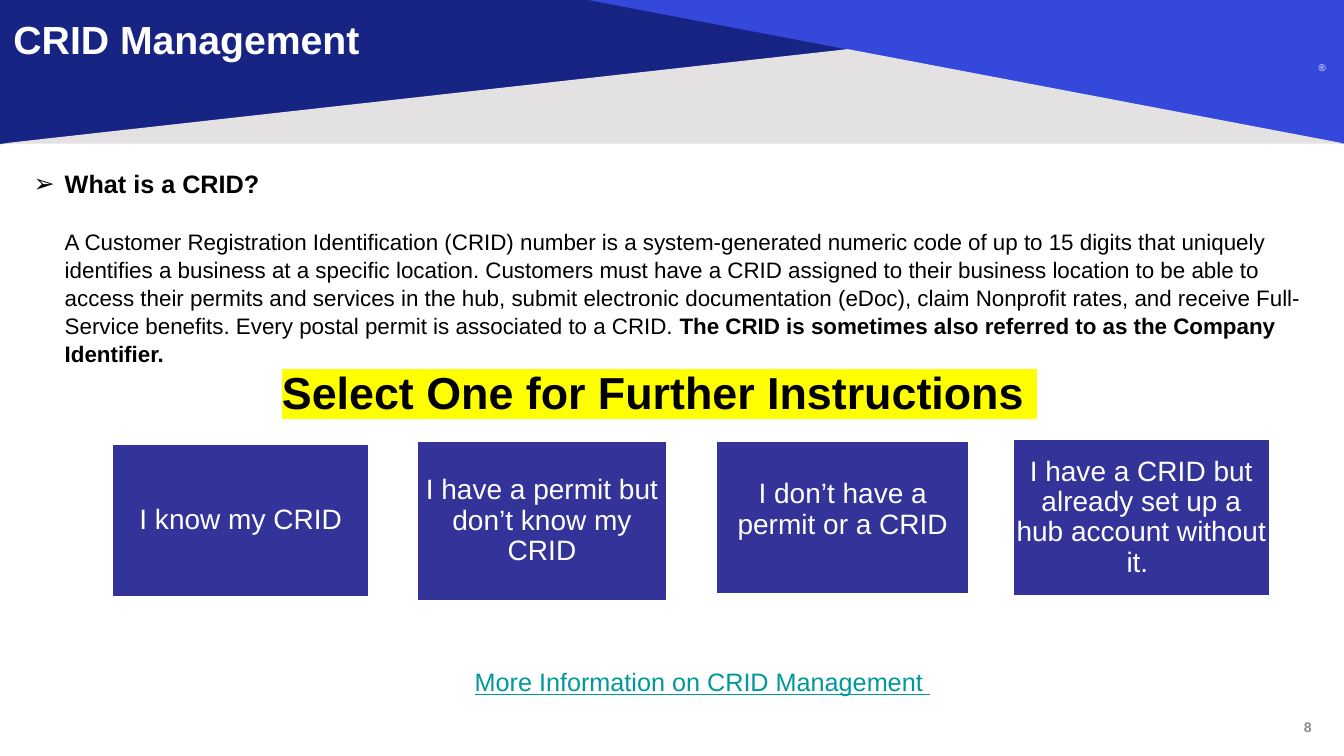
"""Build the CRID Management slide."""
from lxml.etree import SubElement
from pptx import Presentation
from pptx.dml.color import RGBColor
from pptx.enum.shapes import MSO_SHAPE
from pptx.enum.text import MSO_ANCHOR, MSO_AUTO_SIZE, PP_ALIGN
from pptx.oxml import parse_xml
from pptx.oxml.ns import nsdecls, qn
from pptx.util import Inches, Pt

COLORS = {
    "navy": "172483", "blue": "3448DC", "grey": "E3E1E1", "card": "333399",
    "white": "FFFFFF", "black": "000000", "number": "8C8C8C",
    "link": "009999", "marker": "FFFF00",
}

deck = Presentation()
deck.slide_width, deck.slide_height = Inches(13.33), Inches(7.5)
COLUMN, ROW = deck.slide_width / 12, deck.slide_height / 12
page = deck.slides.add_slide(deck.slide_layouts[1])


def grid(left, top, width, height):
    return [int(left * COLUMN), int(top * ROW), int(width * COLUMN), int(height * ROW)]


def write(para, text, size, color, bold=False):
    span = para.add_run()
    span.text = text
    span.font.name = "Arial"
    span.font.size = Pt(size)
    span.font.bold = bold
    span.font.color.rgb = RGBColor.from_string(COLORS[color])
    return span


title, body = page.placeholders

triangles = [
    ("navy", (0, 0, 11.93, 2.29), 0, ["flipV"]),
    ("blue", (5.25, 0, 6.76, 2.29), 0, ["flipH", "flipV"]),
    ("grey", (0.01, 0.78, 12, 1.5), 0.63, []),
]
for color, place, apex, flips in triangles:
    triangle = page.shapes.add_shape(MSO_SHAPE.ISOSCELES_TRIANGLE, *grid(*place))
    triangle.adjustments[0] = apex
    triangle.shadow.inherit = False
    triangle.fill.solid()
    triangle.fill.fore_color.rgb = RGBColor.from_string(COLORS[color])
    triangle.line.fill.background()
    for flip in flips:
        triangle.element.spPr.find(qn("a:xfrm")).set(flip, "1")
    title.element.addprevious(triangle.element)

title.left, title.top, title.width, title.height = grid(0.03, 0.05, 3.65, 1.14)
title.text_frame.auto_size = MSO_AUTO_SIZE.NONE
title.text_frame.vertical_anchor = MSO_ANCHOR.MIDDLE
title.text_frame.paragraphs[0].alignment = PP_ALIGN.LEFT
write(title.text_frame.paragraphs[0], "CRID Management", 28, "white", True)

body.left, body.top, body.width, body.height = grid(0.2, 2.59, 11.65, 3.23)
body.text_frame.auto_size = MSO_AUTO_SIZE.NONE
question = body.text_frame.paragraphs[0]
answer = body.text_frame.add_paragraph()
for para, indent, bullet in [(question, -0.31, "➢"), (answer, 0, None)]:
    properties = para._p.get_or_add_pPr()
    properties.set("marL", str(Inches(0.32)))
    properties.set("indent", str(Inches(indent)))
    if bullet:
        SubElement(properties, qn("a:buFont"), typeface="Arial")
        SubElement(properties, qn("a:buChar"), char=bullet)
    else:
        SubElement(properties, qn("a:buNone"))
    para.space_before = Pt(0)
question.space_after = Pt(20)
answer.line_spacing = 1.05
write(question, "What is a CRID?", 18, "black", True)
write(answer, "A Customer Registration Identification (CRID) number is a system-generated "
      "numeric code of up to 15 digits that uniquely identifies a business at a specific "
      "location. Customers must have a CRID assigned to their business location to be able "
      "to access their permits and services in the hub, submit electronic documentation "
      "(eDoc), claim Nonprofit rates, and receive Full-Service benefits. Every postal "
      "permit is associated to a CRID. ", 16, "black")
write(answer, "The CRID is sometimes also referred to as the Company Identifier.",
      16, "black", True)

labels = [
    ("®", (11.71, 0.9, 0.19, 0.35), 7, "white", False, PP_ALIGN.CENTER),
    ("8", (8.6, 11.33, 3.2, 0.4), 10, "number", True, PP_ALIGN.RIGHT),
    ("More Information on CRID Management ", (4.15, 10.5, 5.26, 0.64), 18, "link",
     False, PP_ALIGN.LEFT),
    ("Select One for Further Instructions ", (2.13, 5.71, 7.52, 1.02), 32, "black",
     True, PP_ALIGN.CENTER),
]
for text, place, size, color, bold, alignment in labels:
    box = page.shapes.add_textbox(*grid(*place))
    frame = box.text_frame
    frame.word_wrap = True
    if text == "®":
        frame.margin_left = frame.margin_right = 0
    frame.paragraphs[0].alignment = alignment
    span = write(frame.paragraphs[0], text, size, color, bold)
    if color == "link":
        span.font.underline = True
    if text.startswith("Select"):
        highlight = parse_xml(f'<a:highlight {nsdecls("a")}>'
                              f'<a:srgbClr val="{COLORS["marker"]}"/></a:highlight>')
        span.font._element.find(qn("a:solidFill")).addnext(highlight)

cards = [
    ("I know my CRID", (1, 7.04, 2.3, 2.44), 0.02),
    ("I have a permit but don’t know my CRID", (3.72, 7, 2.24, 2.54), 0.02),
    ("I don’t have a permit or a CRID", (6.39, 7, 2.27, 2.44), 0.18),
    ("I have a CRID but already set up a hub account without it. ",
     (9.04, 6.96, 2.3, 2.51), 0.02),
]
for text, place, bottom in cards:
    card = page.shapes.add_shape(MSO_SHAPE.RECTANGLE, *grid(*place))
    card.shadow.inherit = False
    card.fill.solid()
    card.fill.fore_color.rgb = RGBColor.from_string(COLORS["card"])
    card.line.color.rgb = RGBColor.from_string(COLORS["white"])
    card.line.width = Pt(2)
    frame = card.text_frame
    frame.word_wrap = True
    frame.vertical_anchor = MSO_ANCHOR.MIDDLE
    frame.margin_left = frame.margin_right = frame.margin_top = Inches(0.02)
    frame.margin_bottom = Inches(bottom)
    frame.paragraphs[0].alignment = PP_ALIGN.CENTER
    frame.paragraphs[0].line_spacing = 0.9
    write(frame.paragraphs[0], text, 20, "white")

deck.save("out.pptx")
